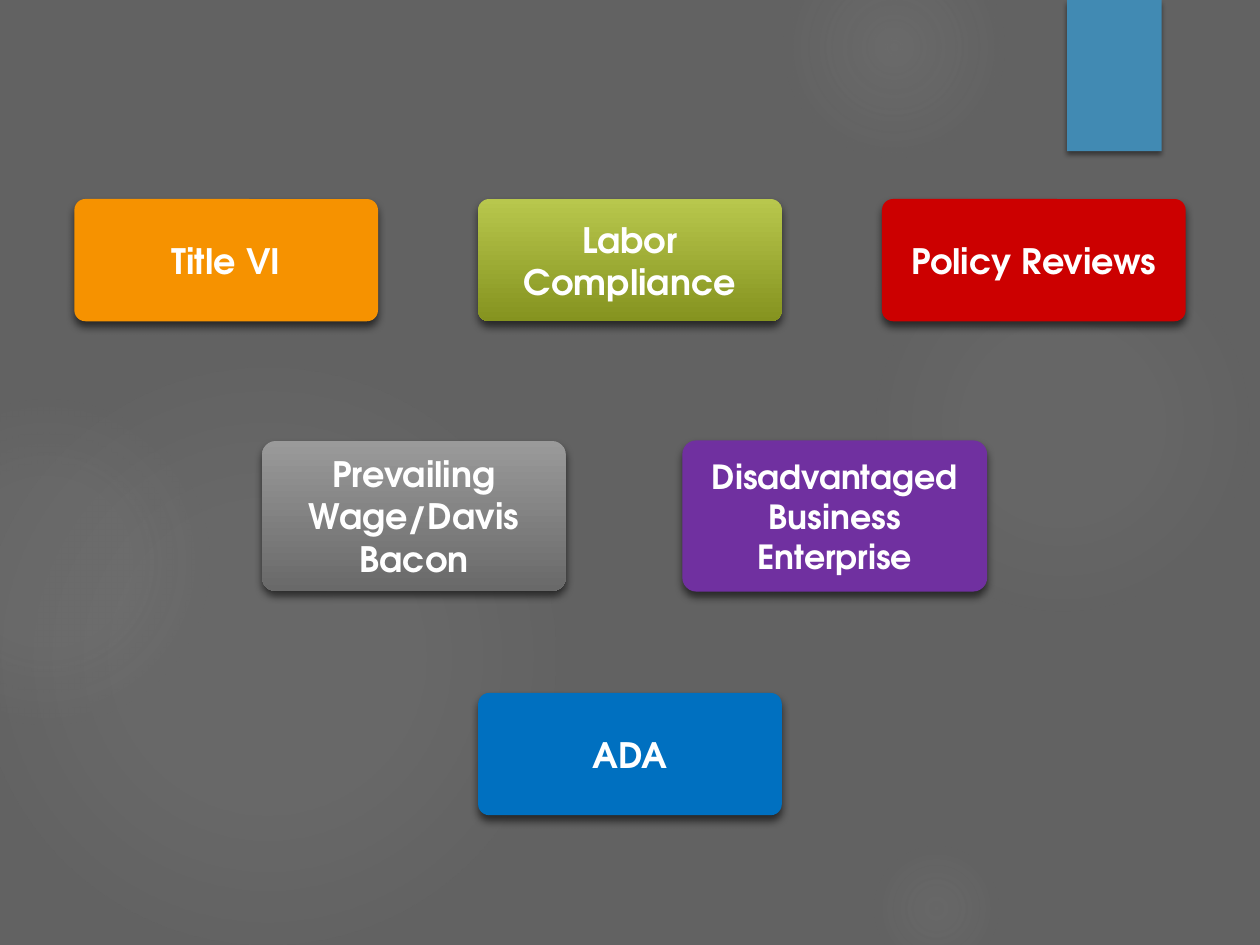
from pptx import Presentation
from pptx.dml.color import RGBColor
from pptx.enum.shapes import MSO_SHAPE
from pptx.enum.text import MSO_ANCHOR, PP_ALIGN
from pptx.oxml import parse_xml
from pptx.oxml.ns import nsdecls
from pptx.util import Inches, Pt

THEME = {
    "background": "626262", "glow": "9E9E9E", "tab": "418AB3",
    "text": "FFFFFF", "shadow": "000000",
    "font": "TeX Gyre Adventor", "size": 20, "small": 19,
    "orange": ["F69200"], "green": ["B8C74D", "85931F"], "red": ["CC0000"],
    "gray": ["9A9A9A", "696969"], "purple": ["7030A0"], "blue": ["0070C0"],
}
WIDTH, HEIGHT = 10, 7.5
CARD_WIDTH = 2.41

# Rows of cards: (centre, pitch, top, height, [(label, colour, type size)])
ROWS = [
    (5, 3.205, 1.58, 0.97, [("Title VI", "orange", "size"),
                            ("Labor Compliance", "green", "size"),
                            ("Policy Reviews", "red", "size")]),
    (4.955, 3.34, 3.5, 1.19, [("Prevailing Wage/Davis Bacon", "gray", "size"),
                              ("Disadvantaged Business Enterprise", "purple", "small")]),
    (5, 0, 5.5, 0.97, [("ADA", "blue", "size")]),
]

# Background glows: (left, top, diameter, [(stop %, opacity %)])
GLOWS = [
    (6.89, 1.83, 3.08, [(0, 7), (36, 6), (69, 0)]),
    (6.22, -0.5, 1.75, [(0, 14), (36, 7), (73, 0)]),
    (6.89, 6.67, 1.08, [(0, 9), (36, 5), (66, 0)]),
    (-0.17, 2.92, 4.58, [(0, 11), (36, 10), (75, 0)]),
    (-0.92, 3.17, 2.58, [(0, 8), (36, 8), (72, 0)]),
]


def rgb(name):
    return RGBColor.from_string(THEME[name])


def set_all(target, values):
    for name, value in values.items():
        setattr(target, name, value)


def add_box(page, kind, left, top, width, height):
    box = page.shapes.add_shape(kind, *map(Inches, (left, top, width, height)))
    box.shadow.inherit = False
    box.line.fill.background()
    return box


def fill_gradient(box, stops, direction):
    """Stops are (position %, colour, opacity %)."""
    marks = "".join(
        f'<a:gs pos="{position * 1000}"><a:srgbClr val="{color}">'
        f'<a:alpha val="{opacity * 1000}"/></a:srgbClr></a:gs>'
        for position, color, opacity in stops)
    box.fill.background()
    properties = box._element.spPr
    empty = properties.find("{*}noFill")
    properties.replace(empty, parse_xml(
        f'<a:gradFill {nsdecls("a")} rotWithShape="1">'
        f'<a:gsLst>{marks}</a:gsLst>{direction}</a:gradFill>'))


def cast_shadow(box, opacity, blur, distance):
    box._element.spPr.find("{*}effectLst").append(parse_xml(
        f'<a:outerShdw {nsdecls("a")} blurRad="{Pt(blur)}" dist="{Pt(distance)}" '
        f'dir="5400000" algn="ctr" rotWithShape="0"><a:srgbClr val="{THEME["shadow"]}">'
        f'<a:alpha val="{opacity * 1000}"/></a:srgbClr></a:outerShdw>'))


def add_card(page, left, top, height, label, color, size):
    box = add_box(page, MSO_SHAPE.ROUNDED_RECTANGLE, left, top, CARD_WIDTH, height)
    box.adjustments[0] = 0.09
    shades = THEME[color]
    if len(shades) == 2:
        fill_gradient(box, [(0, shades[0], 100), (100, shades[1], 100)],
                      '<a:lin ang="5400000" scaled="0"/>')
    else:
        box.fill.solid()
        box.fill.fore_color.rgb = RGBColor.from_string(shades[0])
    if color == "purple":
        box.line.color.rgb = RGBColor.from_string(shades[0])
        box.line.width = Pt(0.75)
    cast_shadow(box, 60, 5, 3)
    set_all(box.text_frame, {"word_wrap": True, "vertical_anchor": MSO_ANCHOR.MIDDLE})
    para = box.text_frame.paragraphs[0]
    para.alignment = PP_ALIGN.CENTER
    span = para.add_run()
    span.text = label
    set_all(span.font, {"name": THEME["font"], "size": Pt(THEME[size]), "bold": True})
    span.font.color.rgb = rgb("text")


def main():
    deck = Presentation()
    set_all(deck, {"slide_width": Inches(WIDTH), "slide_height": Inches(HEIGHT)})
    page = deck.slides.add_slide(deck.slide_layouts[6])
    page.background.fill.solid()
    page.background.fill.fore_color.rgb = rgb("background")

    # Soft glows
    for left, top, diameter, stops in GLOWS:
        glow = add_box(page, MSO_SHAPE.OVAL, left, top, diameter, diameter)
        fill_gradient(glow, [(at, THEME["glow"], opacity) for at, opacity in stops],
                      '<a:path path="circle"><a:fillToRect l="50000" t="50000" '
                      'r="50000" b="50000"/></a:path>')

    # Corner tab
    tab = add_box(page, MSO_SHAPE.RECTANGLE, 8.47, 0, 0.75, 1.2)
    tab.fill.solid()
    tab.fill.fore_color.rgb = rgb("tab")
    cast_shadow(tab, 45, 3, 2)

    # Cards, each row spread evenly about its centre
    for centre, pitch, top, height, cards in ROWS:
        first = centre - pitch * (len(cards) - 1) / 2 - CARD_WIDTH / 2
        for column, card in enumerate(cards):
            add_card(page, first + column * pitch, top, height, *card)

    deck.save("out.pptx")


if __name__ == "__main__":
    main()
